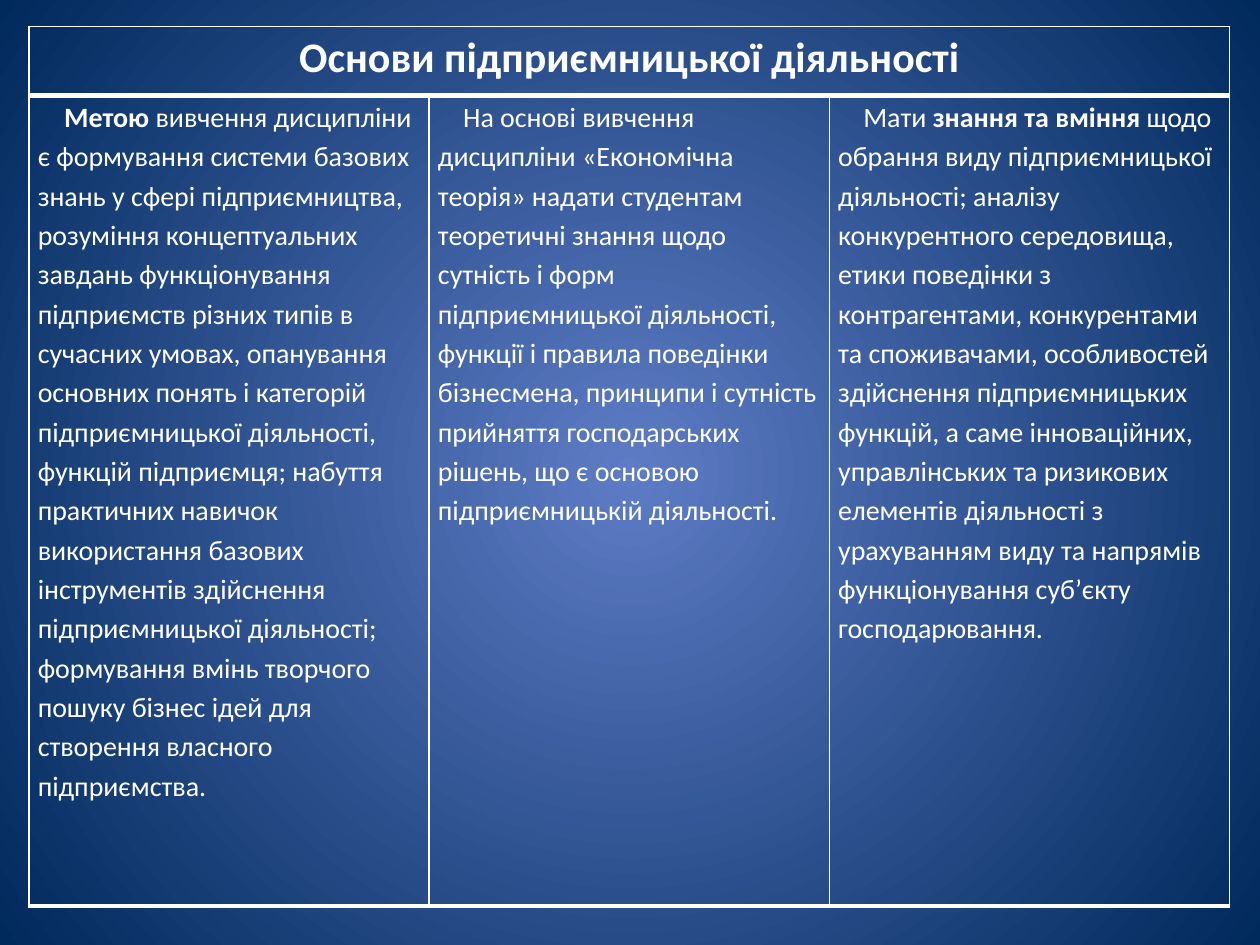
from lxml.etree import SubElement
from pptx import Presentation
from pptx.dml.color import RGBColor
from pptx.enum.text import PP_ALIGN as Align
from pptx.oxml.ns import qn
from pptx.util import Inches, Pt

TITLE = "Основи підприємницької діяльності"
# Each column: first-line indent in inches, then (text, bold) runs
COLUMNS = [
    (0.21, [
        ("Метою", True),
        (" вивчення дисципліни є формування системи базових знань у сфері "
         "підприємництва, розуміння концептуальних завдань функціонування "
         "підприємств різних типів в сучасних умовах, опанування основних понять "
         "і категорій підприємницької діяльності, функцій підприємця; набуття "
         "практичних навичок використання базових інструментів здійснення "
         "підприємницької діяльності; формування вмінь творчого пошуку бізнес "
         "ідей для створення власного підприємства.", False),
    ]),
    (0.2, [
        ("На основі вивчення дисципліни «Економічна теорія» надати студентам "
         "теоретичні знання щодо сутність і форм підприємницької діяльності, "
         "функції і правила поведінки бізнесмена, принципи і сутність прийняття "
         "господарських рішень, що є основою підприємницькій діяльності.", False),
    ]),
    (0.2, [
        ("Мати ", False),
        ("знання та вміння", True),
        (" щодо обрання виду підприємницької діяльності; аналізу конкурентного "
         "середовища, етики поведінки з контрагентами, конкурентами та "
         "споживачами, особливостей здійснення підприємницьких функцій, а саме "
         "інноваційних, управлінських та ризикових елементів діяльності з "
         "урахуванням виду та напрямів функціонування суб’єкту господарювання.",
         False),
    ]),
]
THEME = {
    "font": "Calibri", "text": "FFFFFF", "border": "FFFFFF",
    "center": "5E7CC5", "edge": "00295C",
    "title_size": 24, "body_size": 16, "line_spacing": 1.15,
    "thin": 1, "thick": 3,
}
LEFT, TOP, WIDTH = 0.23, 0.21, 9.53
ROW_HEIGHTS = [0.55, 6.43]


def paint_background(slide):
    """Fill the slide with a circular gradient spreading from its middle."""
    fill = slide.background.fill
    fill.gradient()
    for stop, color in zip(fill.gradient_stops, ("center", "edge")):
        stop.color.rgb = RGBColor.from_string(THEME[color])
    gradient = next(slide.element.iter(qn("a:gradFill")))
    gradient.remove(gradient.find(qn("a:lin")))
    circle = SubElement(gradient, qn("a:path"), {"path": "circle"})
    SubElement(circle, qn("a:fillToRect"), dict.fromkeys("ltrb", "50000"))


def set_borders(cell, top):
    """Draw the four sides: thin ones at the sides, a thick one below."""
    properties = cell._tc.get_or_add_tcPr()
    widths = {"L": THEME["thin"], "R": THEME["thin"], "T": top, "B": THEME["thick"]}
    for side, width in widths.items():
        line = SubElement(properties, qn(f"a:ln{side}"), {"w": str(Pt(width))})
        solid = SubElement(line, qn("a:solidFill"))
        SubElement(solid, qn("a:srgbClr"), {"val": THEME["border"]})


def add_run(paragraph, text, size, bold):
    run = paragraph.add_run()
    run.text = text
    run.font.name = THEME["font"]
    run.font.size = Pt(size)
    run.font.bold = bold
    run.font.color.rgb = RGBColor.from_string(THEME["text"])


def fill_body_cell(cell, indent, runs):
    cell.margin_left = cell.margin_right = Inches(0.07)
    cell.margin_top = cell.margin_bottom = 0
    paragraph = cell.text_frame.paragraphs[0]
    paragraph.line_spacing = THEME["line_spacing"]
    properties = paragraph._p.get_or_add_pPr()
    properties.set("marL", "0")
    properties.set("indent", str(Inches(indent)))
    for text, bold in runs:
        add_run(paragraph, text, THEME["body_size"], bold)


def add_course_table(slide):
    table = slide.shapes.add_table(
        len(ROW_HEIGHTS), len(COLUMNS), Inches(LEFT), Inches(TOP),
        Inches(WIDTH), Inches(sum(ROW_HEIGHTS))).table
    table.first_row = table.horz_banding = False
    for row, height in zip(table.rows, ROW_HEIGHTS):
        row.height = Inches(height)

    title_cell = table.cell(0, 0)
    title_cell.merge(table.cell(0, len(COLUMNS) - 1))
    heading = title_cell.text_frame.paragraphs[0]
    heading.alignment = Align.CENTER
    add_run(heading, TITLE, THEME["title_size"], True)

    for index, (indent, runs) in enumerate(COLUMNS):
        fill_body_cell(table.cell(1, index), indent, runs)
        for row, top in enumerate((THEME["thin"], THEME["thick"])):
            cell = table.cell(row, index)
            set_borders(cell, top)
            cell.fill.background()


def main():
    presentation = Presentation()
    presentation.slide_width, presentation.slide_height = Inches(10), Inches(7.5)
    slide = presentation.slides.add_slide(presentation.slide_layouts[6])
    paint_background(slide)
    add_course_table(slide)
    presentation.save("out.pptx")


if __name__ == "__main__":
    main()
